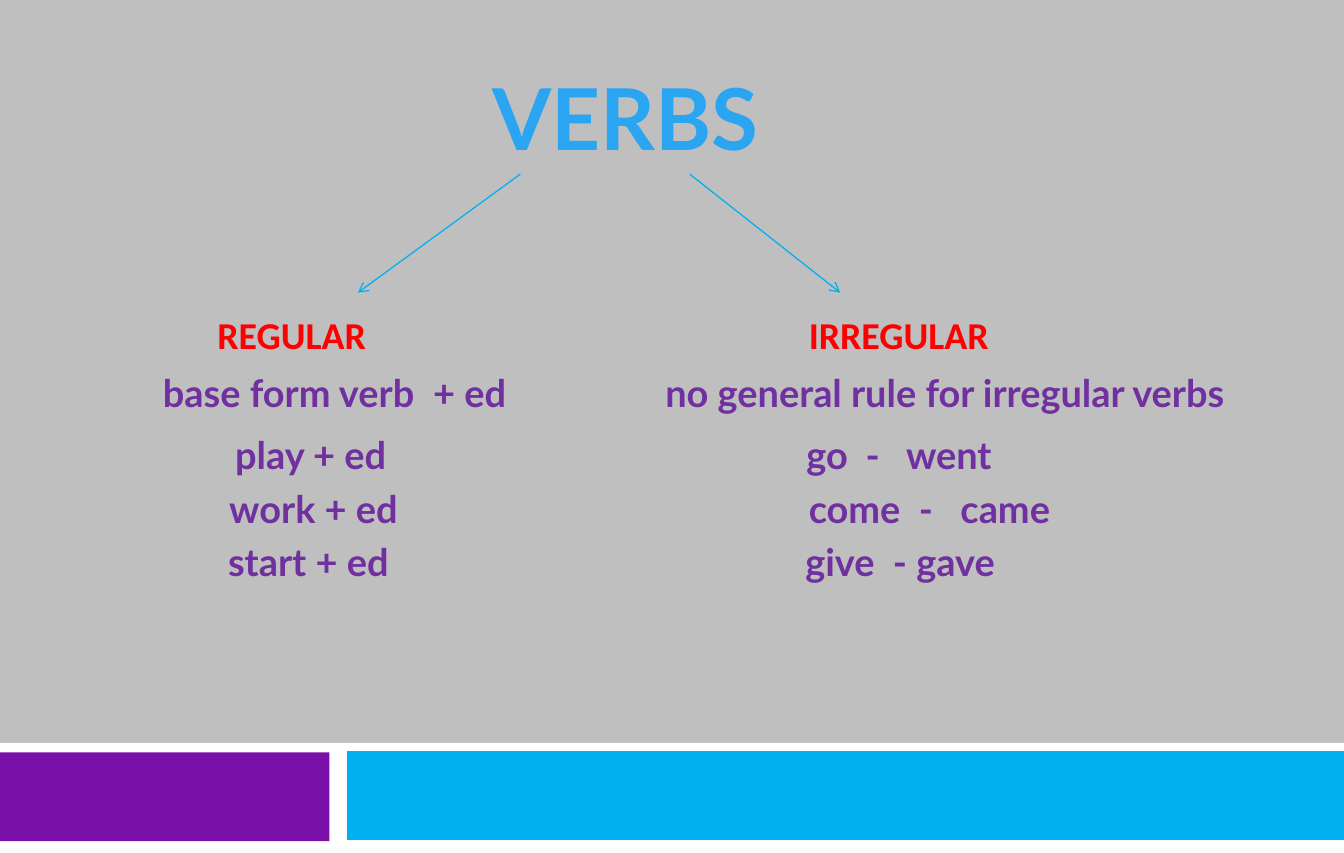
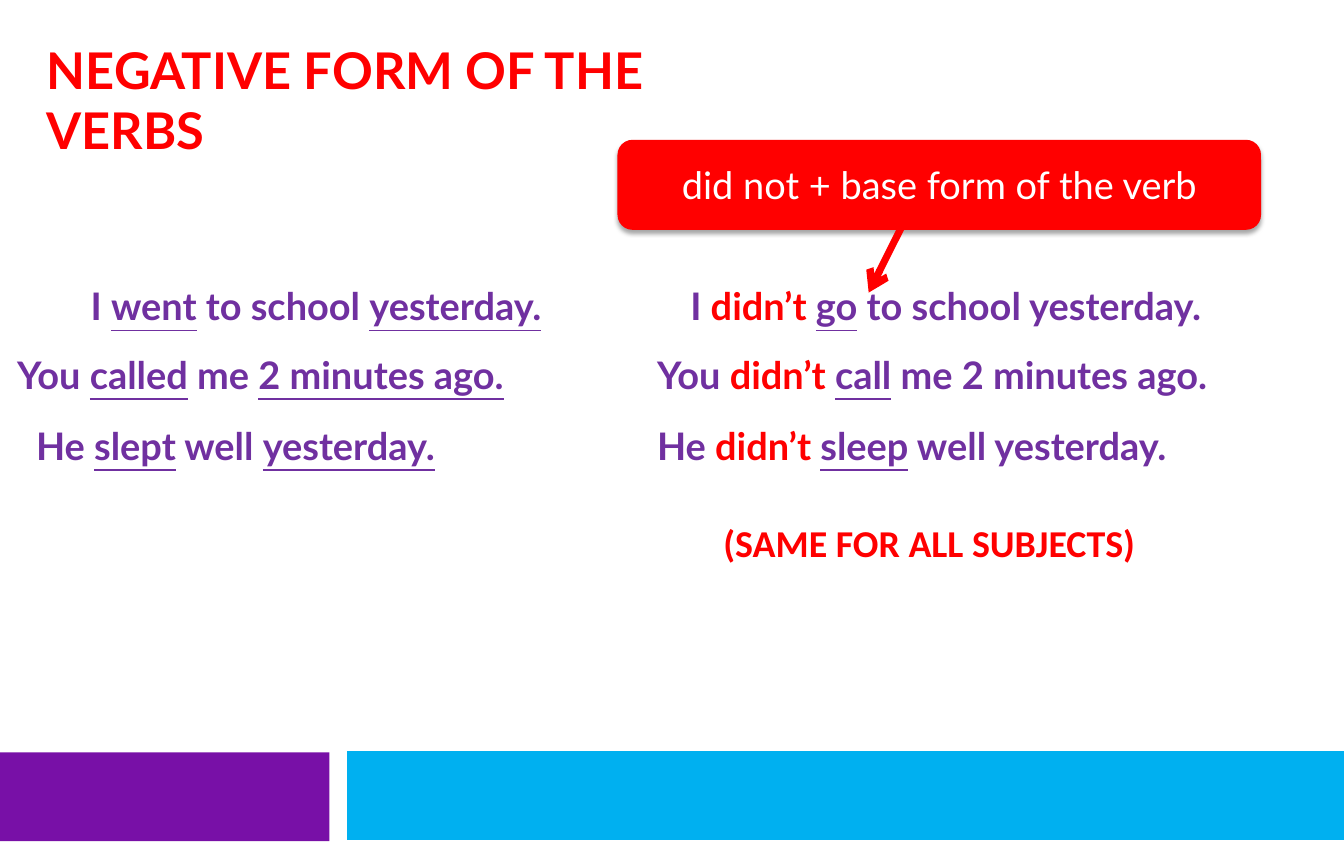
import itertools
from dataclasses import dataclass

import lxml.etree
import pptx
import pptx.dml.color
import pptx.enum.shapes
import pptx.enum.text
import pptx.oxml.ns
import pptx.util

SCALE = 9525  # EMU per px, 96 px to the inch
PAGE_WIDTH, PAGE_HEIGHT = 1134, 720
LINE_HEIGHT = 48
ALIGN = pptx.enum.text.PP_ALIGN
SHAPE = pptx.enum.shapes.MSO_SHAPE
qn = pptx.oxml.ns.qn


@dataclass(frozen=True)
class Theme:
    white: str = "FFFFFF"
    grey: str = "BFBFBF"
    violet: str = "7810A7"
    sky: str = "00B0F0"
    red: str = "FF0000"
    purple: str = "7030A0"
    shadow: str = "000000"
    title_stops: tuple = ((0, "5BB5F7"), (49, "2AA5F2"), (50, "0092C7"),
                          (92, "0082B2"), (100, "0080AE"))
    body_font: str = "Lato"
    label_font: str = "Calibri"
    body: int = 24
    heading: int = 32
    title: int = 54


THEME = Theme()


def px(length):
    return pptx.util.Emu(length * SCALE)


def rgb(colour):
    return pptx.dml.color.RGBColor.from_string(colour)


def sub(parent, tag, **attributes):
    return lxml.etree.SubElement(parent, qn(tag), attributes)


# Elements
def add_block(slide, kind, box, colour):
    block = slide.shapes.add_shape(kind, *map(px, box))
    block.shadow.inherit = False
    block.fill.solid()
    block.fill.fore_color.rgb = rgb(colour)
    block.line.fill.background()
    return block


def style(paragraph, colour, size=THEME.body, face=THEME.body_font, bold=True):
    font = paragraph.font
    font.name, font.size, font.bold = face, pptx.util.Pt(size), bold
    font.color.rgb = rgb(colour)


def add_text(slide, box, text, colour=THEME.purple, tabs=(), wrap=False, **font):
    """Add one paragraph; tabs are px from the start of the text."""
    frame = slide.shapes.add_textbox(*map(px, box)).text_frame
    frame.word_wrap = wrap
    frame.auto_size = pptx.enum.text.MSO_AUTO_SIZE.SHAPE_TO_FIT_TEXT
    paragraph = frame.paragraphs[0]
    paragraph.text = text
    if tabs:
        stops = sub(paragraph._p.get_or_add_pPr(), "a:tabLst")
        for stop in tabs:
            sub(stops, "a:tab", pos=str(px(stop)), algn="l")
    style(paragraph, colour, **font)
    return paragraph


def add_sentence(slide, box, parts):
    """Add a sentence from (text, colour, underlined) parts."""
    sentence = add_text(slide, box, "")
    for text, colour, underlined in parts:
        run = sentence.add_run()
        run.text = text
        if colour != THEME.purple:
            run.font.color.rgb = rgb(colour)
        if underlined:
            run.font.underline = True


def add_arrow(slide, start, end, colour, weight):
    arrow = slide.shapes.add_connector(
        pptx.enum.shapes.MSO_CONNECTOR.STRAIGHT, *map(px, start + end))
    arrow.line.color.rgb = rgb(colour)
    arrow.line.width = pptx.util.Pt(weight)
    properties = arrow._element.spPr
    sub(properties.find(qn("a:ln")), "a:tailEnd", type="arrow")
    sub(properties, "a:effectLst")


def fill_gradient(run, stops):
    run.font.fill.gradient()
    run.font.fill.gradient_angle = 270
    stop_list = run._r.get_or_add_rPr().find(qn("a:gradFill")).find(qn("a:gsLst"))
    for old_stop in list(stop_list):
        stop_list.remove(old_stop)
    for percent, colour in stops:
        stop = sub(stop_list, "a:gs", pos=str(percent * 1000))
        sub(stop, "a:srgbClr", val=colour)


def add_callout(slide, box, text):
    callout = add_block(slide, SHAPE.ROUNDED_RECTANGLE, box, THEME.red)
    effects = callout._element.spPr.find(qn("a:effectLst"))
    shadow = sub(effects, "a:outerShdw", blurRad="38100", dist="25400",
                 dir="5400000", rotWithShape="0")
    sub(sub(shadow, "a:srgbClr", val=THEME.shadow), "a:alpha", val="35000")
    frame = callout.text_frame
    frame.word_wrap = True
    frame.vertical_anchor = pptx.enum.text.MSO_ANCHOR.MIDDLE
    paragraph = frame.paragraphs[0]
    paragraph.text = text
    paragraph.alignment = ALIGN.CENTER
    style(paragraph, THEME.white, bold=False)


def add_page(deck, background):
    slide = deck.slides.add_slide(deck.slide_layouts[6])
    slide.background.fill.solid()
    slide.background.fill.fore_color.rgb = rgb(background)
    if background != THEME.white:
        add_block(slide, SHAPE.RECTANGLE, (0, 627, PAGE_WIDTH, 93), THEME.white)
    add_block(slide, SHAPE.RECTANGLE, (-1, 635, 279, 75), THEME.violet)
    add_block(slide, SHAPE.RECTANGLE, (293, 634, 841, 75), THEME.sky)
    return slide


# Slides
def build_verbs(deck):
    slide = add_page(deck, THEME.grey)
    title = add_text(slide, (389, 50, 278, 97), "VERBS", THEME.sky, size=THEME.title)
    title.alignment = ALIGN.CENTER
    fill_gradient(title.runs[0], THEME.title_stops)

    for start, end in ((439, 302), (582, 709)):
        add_arrow(slide, (start, 147), (end, 247), THEME.sky, 0.79)

    for left, width, kind in ((174, 152, "REGULAR"), (673, 179, "IRREGULAR")):
        add_text(slide, (left, 258, width, LINE_HEIGHT), kind, THEME.red,
                 face=THEME.label_font)

    # Rules, then examples at an equal pitch
    add_text(slide, (128, 307, 339, LINE_HEIGHT), "base form verb\t+ ed", tabs=(228,))
    add_text(slide, (552, 307, 545, LINE_HEIGHT), "no general rule for irregular verbs")
    regular = ((189, 164, "play + ed", ()),
               (184, 179, "work + ed", ()),
               (183, 164, "start + ed", ()))
    irregular = ((671, 191, "go\t-\twent", (50, 84)),
                 (673, 245, "come\t-\tcame", (93, 128)),
                 (670, 199, "give\t- gave", (74,)))
    for examples in (regular, irregular):
        for row, (left, width, text, tabs) in enumerate(examples):
            add_text(slide, (left, 360 + 45 * row, width, LINE_HEIGHT), text, tabs=tabs)


def build_negative_form(deck):
    slide = add_page(deck, THEME.white)
    add_text(slide, (30, 28, 653, 61), "NEGATIVE FORM OF THE VERBS", THEME.red,
             size=THEME.heading, wrap=True)

    # Every second part of an affirmative sentence is underlined
    affirmatives = (
        ((67, 234, 431, LINE_HEIGHT), ("I ", "went", " to school ", "yesterday.")),
        ((5, 292, 460, LINE_HEIGHT), ("You ", "called", " me ", "2 minutes ago.")),
        ((21, 352, 388, LINE_HEIGHT), ("He ", "slept", " well ", "yesterday.")))
    for box, parts in affirmatives:
        underlines = itertools.cycle((False, True))
        add_sentence(slide, box, [(part, THEME.purple, underlined)
                                  for part, underlined in zip(parts, underlines)])

    negatives = (
        ((573, 234, 492, LINE_HEIGHT), "I ", "go", " to school yesterday."),
        ((545, 292, 520, LINE_HEIGHT), "You ", "call", " me 2 minutes ago."),
        ((545, 352, 494, LINE_HEIGHT), "He ", "sleep", " well yesterday."))
    for box, subject, verb, rest in negatives:
        add_sentence(slide, box, [(subject, THEME.purple, False),
                                  ("didn’t ", THEME.red, False),
                                  (verb, THEME.purple, True),
                                  (rest, THEME.purple, False)])

    add_callout(slide, (521, 118, 543, 76), "did not + base form of the verb")
    add_arrow(slide, (771, 171), (733, 247), THEME.red, 4.5)
    add_text(slide, (601, 434, 384, LINE_HEIGHT), "(SAME FOR ALL SUBJECTS)", THEME.red,
             face=THEME.label_font)


def main():
    deck = pptx.Presentation()
    deck.slide_width, deck.slide_height = px(PAGE_WIDTH), px(PAGE_HEIGHT)
    build_verbs(deck)
    build_negative_form(deck)
    deck.save("out.pptx")


if __name__ == "__main__":
    main()
